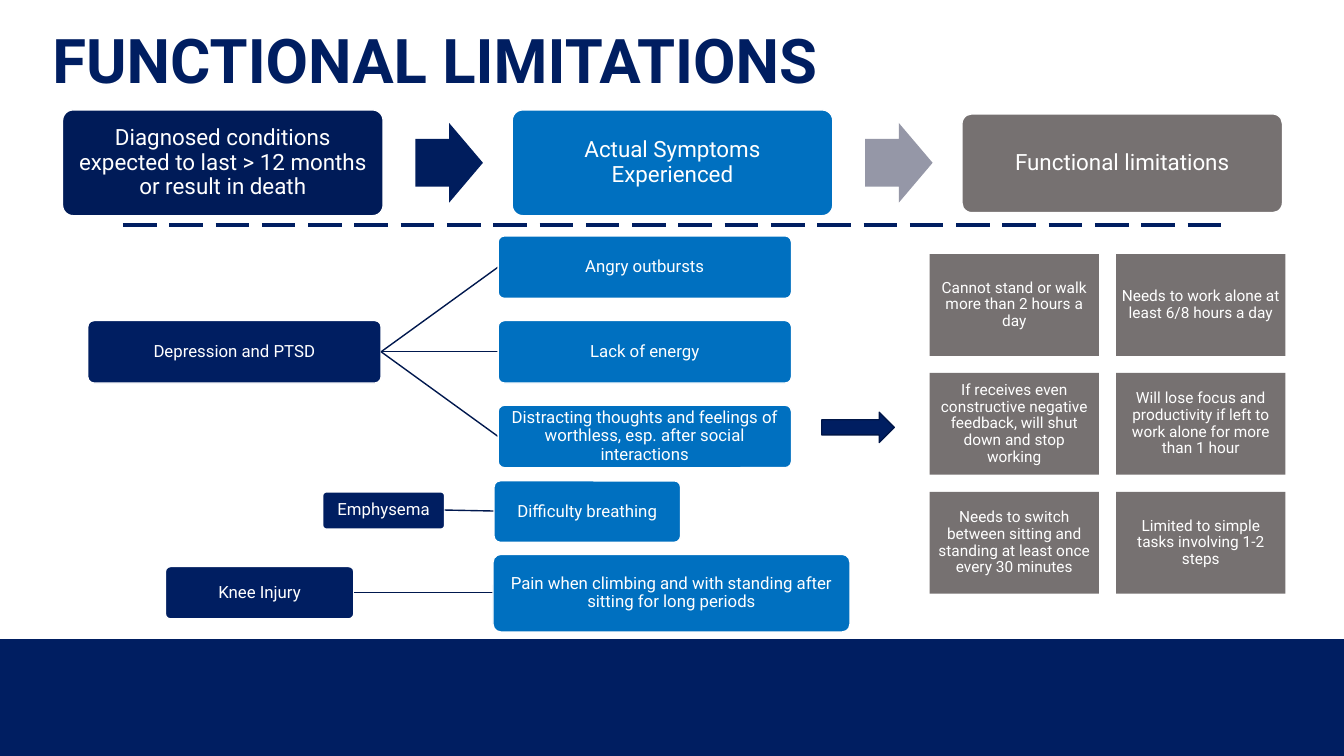
from pptx import Presentation
from pptx.dml.color import RGBColor
from pptx.enum.dml import MSO_LINE
from pptx.enum.shapes import MSO_CONNECTOR, MSO_SHAPE
from pptx.enum.text import MSO_ANCHOR, PP_ALIGN
from pptx.oxml.ns import qn
from pptx.util import Pt
from lxml.etree import SubElement

PX = 9144
FONT = "Roboto"
COLORS = {
    "white": "FFFFFF", "navy": "001E61", "header_navy": "001B58",
    "arrow_navy": "001D5D", "arrow_edge": "001648", "branch": "00184E",
    "blue": "0070C0", "gray": "767171", "pale": "9597A7",
}
HEADERS = [
    ("Diagnosed conditions expected to last > 12 months or result in death",
     "header_navy", 109, 105),
    ("Actual Symptoms Experienced", "blue", 109, 105),
    ("Functional limitations", "gray", 113, 98),
]
CONDITIONS = [
    ("Depression and PTSD", (87, 318, 291, 62), [
        ("Angry outbursts", (494, 234, 291, 62)),
        ("Lack of energy", (494, 318, 291, 62)),
        ("Distracting thoughts and feelings of worthless, esp. after social "
         "interactions", (494, 402, 291, 62)),
    ]),
    ("Emphysema", (320, 488, 121, 37),
     [("Difficulty breathing", (490, 477, 185, 61))]),
    ("Knee Injury", (164, 562, 187, 52),
     [("Pain when climbing and with standing after sitting for long periods",
       (489, 550, 354, 77))]),
]
LIMITATIONS = [
    "Cannot stand or walk more than 2 hours a day",
    "Needs to work alone at least 6/8 hours a day",
    "If receives even constructive negative feedback, will shut down and stop working",
    "Will lose focus and productivity if left to work alone for more than 1 hour",
    "Needs to switch between sitting and standing at least once every 30 minutes",
    "Limited to simple tasks involving 1-2 steps",
]


def color(name):
    return RGBColor.from_string(COLORS[name])


def emu(lengths):
    return [length * PX for length in lengths]


def add_block(slide, kind, place, fill, edge=None, adjust=()):
    block = slide.shapes.add_shape(kind, *emu(place))
    block.shadow.inherit = False
    block.fill.solid()
    block.fill.fore_color.rgb = color(fill)
    if edge:
        block.line.color.rgb = color(edge)
        block.line.width = Pt(1)
    else:
        block.line.fill.background()
    for index, value in enumerate(adjust):
        block.adjustments[index] = value
    return block


def write(block, text, size, margin):
    frame = block.text_frame
    frame.text = text
    frame.word_wrap = True
    frame.vertical_anchor = MSO_ANCHOR.MIDDLE
    frame.margin_left = frame.margin_right = margin * PX
    frame.margin_top = frame.margin_bottom = margin * PX
    para = frame.paragraphs[0]
    para.alignment = PP_ALIGN.CENTER
    para.line_spacing = 0.9
    para.font.name = FONT
    para.font.size = Pt(size)
    para.font.color.rgb = color("white")


def add_rounded(slide, text, place, fill, size=12, margin=1):
    box = add_block(slide, MSO_SHAPE.ROUNDED_RECTANGLE, place, fill, "white", [0.1])
    write(box, text, size, margin)


def add_line(slide, ends, stroke, width):
    line = slide.shapes.add_connector(MSO_CONNECTOR.STRAIGHT, *emu(ends))
    line.line.color.rgb = color(stroke)
    line.line.width = Pt(width)
    SubElement(line._element.spPr, qn("a:effectLst"))
    return line


def add_title(slide, text):
    title = slide.shapes.title
    title.left, title.top, title.width, title.height = emu((42, 17, 1150, 93))
    title.text_frame.text = text
    title.text_frame.vertical_anchor = MSO_ANCHOR.MIDDLE
    para = title.text_frame.paragraphs[0]
    para.alignment = PP_ALIGN.LEFT
    para.line_spacing = 0.9
    font = para.runs[0].font
    font.name, font.size, font.bold = FONT, Pt(44), True
    font.color.rgb = color("navy")


def add_condition(slide, name, place, symptoms):
    left, top, width, height = place
    add_rounded(slide, name, place, "navy")
    for symptom, spot in symptoms:
        ends = (left + width, top + height // 2, spot[0], spot[1] + spot[3] // 2)
        add_line(slide, ends, "branch", 1)
        add_rounded(slide, symptom, spot, "blue")


def add_headers(slide):
    step = 446
    for column, (text, fill, top, height) in enumerate(HEADERS):
        place = (62 + column * step, top, 318, height)
        add_rounded(slide, text, place, fill, 16, 7)
    for column, fill in enumerate(("arrow_navy", "pale")):
        place = (412 + column * step, 122, 67, 79)
        add_block(slide, MSO_SHAPE.RIGHT_ARROW, place, fill, adjust=(0.6, 0.5))


def add_limitations(slide):
    for index, text in enumerate(LIMITATIONS):
        row, column = divmod(index, 2)
        place = (922 + column * 185, 252 + row * 118, 168, 101)
        tile = add_block(slide, MSO_SHAPE.RECTANGLE, place, "gray")
        write(tile, text, 11, 5)


def main():
    deck = Presentation()
    deck.slide_width, deck.slide_height = emu((1333, 750))
    slide = deck.slides.add_slide(deck.slide_layouts[5])
    add_block(slide, MSO_SHAPE.RECTANGLE, (0, 634, 1333, 116), "navy")
    add_title(slide, "FUNCTIONAL LIMITATIONS")
    for name, place, symptoms in CONDITIONS:
        add_condition(slide, name, place, symptoms)
    add_block(slide, MSO_SHAPE.RIGHT_ARROW, (815, 409, 72, 30), "navy", "arrow_edge")
    add_limitations(slide)
    add_headers(slide)
    divider = add_line(slide, (122, 223, 1212, 223), "navy", 3)
    divider.line.dash_style = MSO_LINE.LONG_DASH
    deck.save("out.pptx")


if __name__ == "__main__":
    main()
